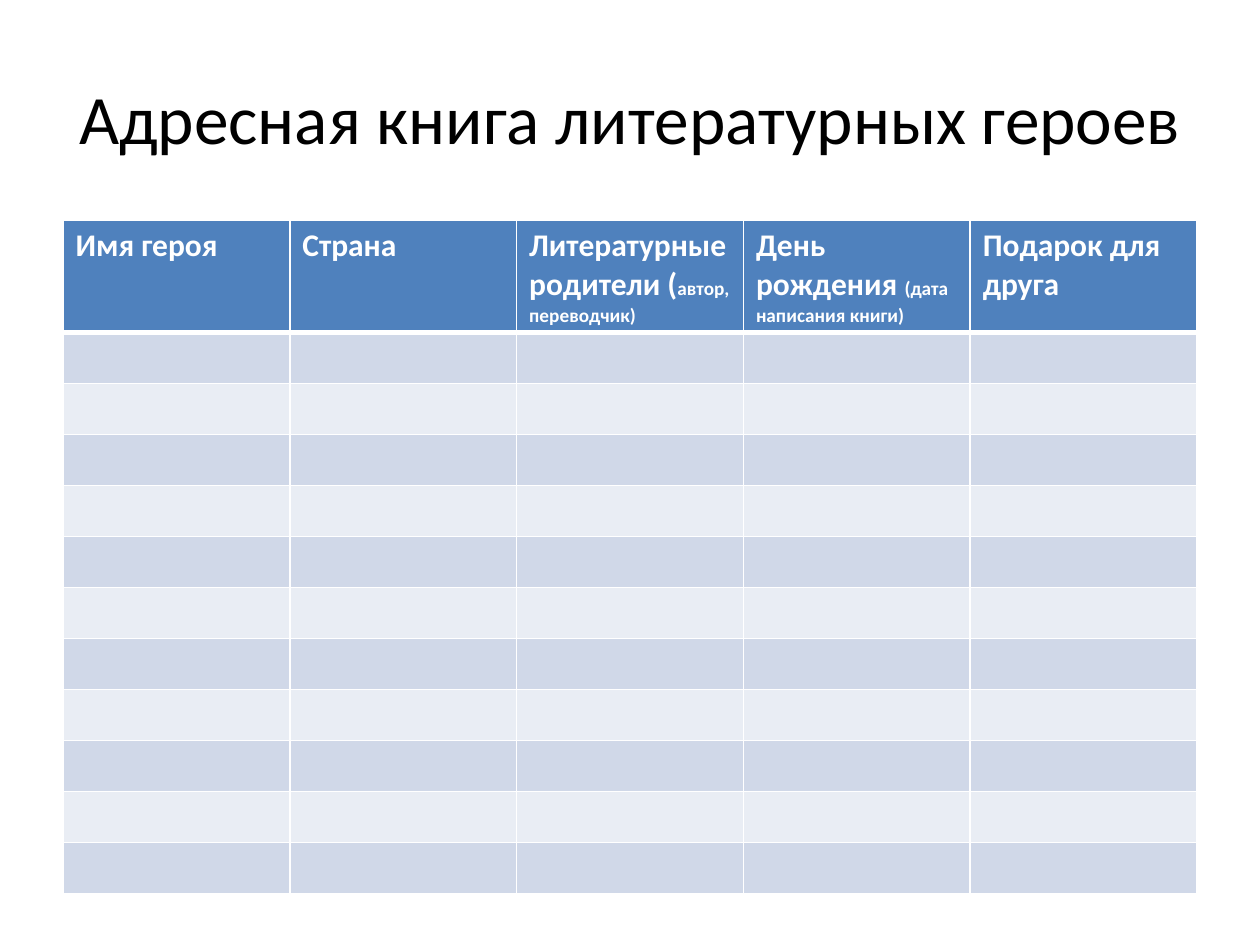
from dataclasses import dataclass

from lxml.etree import SubElement
from pptx import Presentation
from pptx.dml.color import RGBColor
from pptx.enum.text import MSO_ANCHOR as Anchor, PP_ALIGN as Align
from pptx.oxml.ns import qn
from pptx.util import Inches, Pt

FONT = "Calibri"
WHITE = "FFFFFF"
HEADER_FILL = "4F81BD"
BAND_FILLS = ("E9EDF4", "D0D8E8")
BODY_ROWS = 11
HEADER_HEIGHT = 0.89
BODY_HEIGHT = 0.405
MARGIN = 0.05


@dataclass(frozen=True)
class Run:
    text: str
    size: float = 18
    color: str = WHITE
    bold: bool = True


HEADERS = (
    (Run("Имя героя"),),
    (Run("Страна"),),
    (Run("Литературные родители ("), Run("автор, переводчик)", 11)),
    (Run("День рождения "), Run("(дата написания книги)", 11)),
    (Run("Подарок для друга"),),
)
TITLE = Run("Адресная книга литературных героев", 39.6, "000000", False)


def rgb(value: str) -> RGBColor:
    return RGBColor.from_string(value)


def add_run(p, run: Run) -> None:
    r = p.add_run()
    r.text = run.text
    r.font.name = FONT
    r.font.size = Pt(run.size)
    r.font.bold = run.bold
    r.font.color.rgb = rgb(run.color)


def style_cell(cell, fill: str, top: float, bottom: float) -> None:
    props = cell._tc.get_or_add_tcPr()
    for side, width in (("L", 1), ("R", 1), ("T", top), ("B", bottom)):
        line = SubElement(props, qn(f"a:ln{side}"), w=str(Pt(width)))
        solid = SubElement(line, qn("a:solidFill"))
        SubElement(solid, qn("a:srgbClr"), val=WHITE)
    cell.fill.solid()
    cell.fill.fore_color.rgb = rgb(fill)


def add_title(s, width: int, height: int) -> None:
    box = s.shapes.add_textbox(
        int(width * MARGIN), int(height * 0.04),
        int(width * (1 - 2 * MARGIN)), int(height / 6),
    )
    tf = box.text_frame
    tf.word_wrap = True
    tf.vertical_anchor = Anchor.MIDDLE
    p = tf.paragraphs[0]
    p.alignment = Align.CENTER
    add_run(p, TITLE)


def add_address_table(s, width: int) -> None:
    heights = [HEADER_HEIGHT] + [BODY_HEIGHT] * BODY_ROWS
    table = s.shapes.add_table(
        len(heights), len(HEADERS), int(width * MARGIN), Inches(1.75),
        int(width * (1 - 2 * MARGIN)), Inches(sum(heights)),
    ).table
    for i, height in enumerate(heights):
        table.rows[i].height = Inches(height)
        fill = BAND_FILLS[i % 2] if i else HEADER_FILL
        for cell in table.rows[i].cells:
            style_cell(cell, fill, 3 if i == 1 else 1, 1 if i else 3)
    for cell, runs in zip(table.rows[0].cells, HEADERS):
        for run in runs:
            add_run(cell.text_frame.paragraphs[0], run)


def main() -> None:
    prs = Presentation()
    prs.slide_width, prs.slide_height = Inches(10), Inches(7.5)
    s = prs.slides.add_slide(prs.slide_layouts[6])
    add_title(s, prs.slide_width, prs.slide_height)
    add_address_table(s, prs.slide_width)
    prs.save("out.pptx")


if __name__ == "__main__":
    main()
